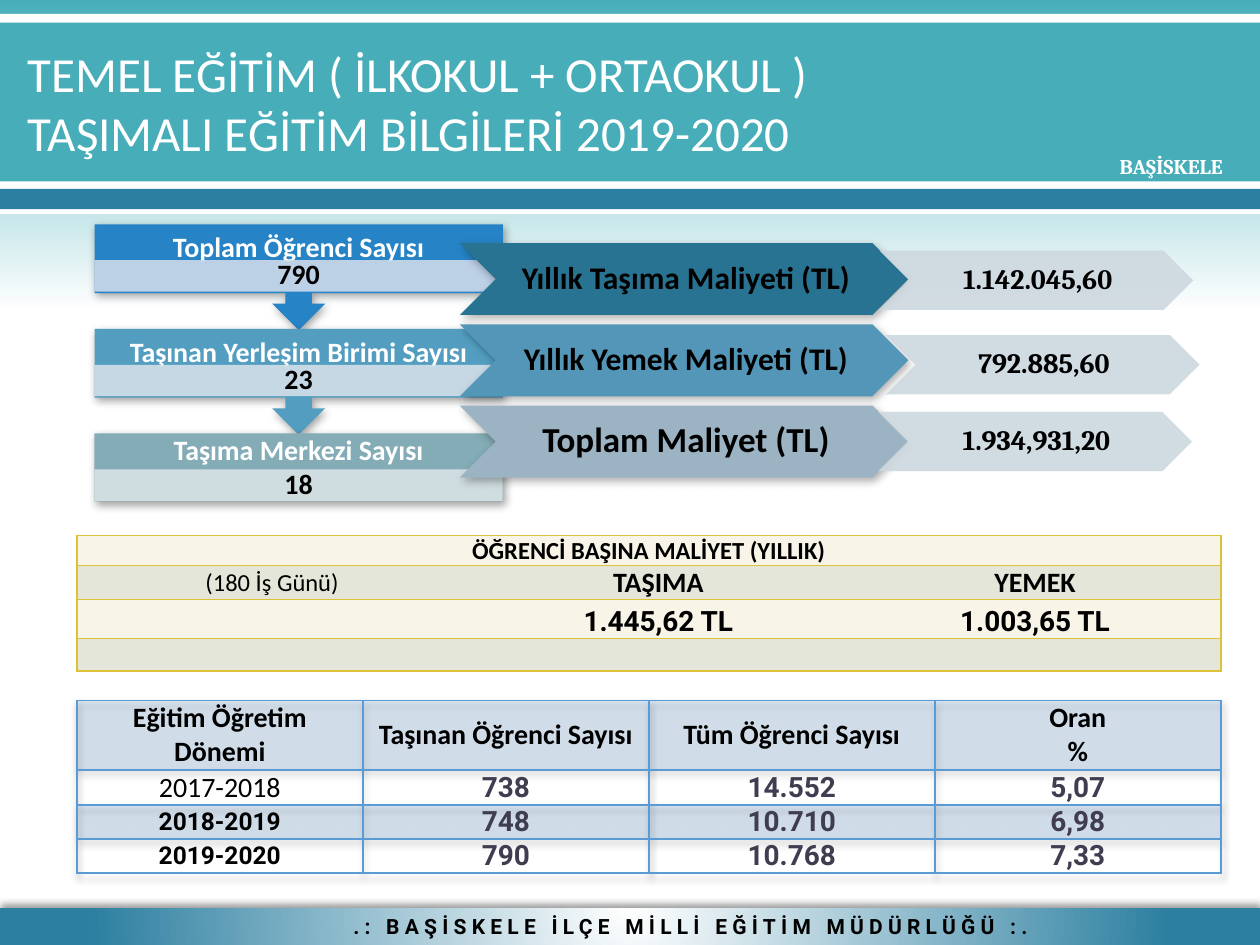
from lxml import etree
from pptx import Presentation
from pptx.dml.color import RGBColor
from pptx.enum import shapes, text
from pptx.oxml import ns, parse_xml
from pptx.util import Inches, Pt

WHITE = RGBColor(0xFF, 0xFF, 0xFF)
BLACK = RGBColor(0, 0, 0)
TEAL = RGBColor(0x47, 0xAE, 0xB9)
DEEP_BLUE = RGBColor(0x2C, 0x7F, 0xA0)
AMOUNT_FILL = RGBColor(0xCD, 0xD8, 0xDF)
GOLD = RGBColor(0xDD, 0xC2, 0x37)
CREAM = RGBColor(0xF9, 0xF4, 0xE8)
SAGE = RGBColor(0xE5, 0xE6, 0xDA)
GRID_BLUE = RGBColor(0x5B, 0x9B, 0xD5)
FIGURE = RGBColor(0x40, 0x3D, 0x50)
PLAIN_TABLE = "{2D5ABB26-0587-4C30-8999-92F81FD0307C}"

COUNTS = [  # label, value, header fill, value fill
    ("Toplam Öğrenci Sayısı", "790", RGBColor(0x26, 0x83, 0xC6), RGBColor(0xCD, 0xD9, 0xEA)),
    ("Taşınan Yerleşim Birimi Sayısı", "23", RGBColor(0x53, 0x9E, 0xC0), RGBColor(0xD3, 0xDF, 0xE8)),
    ("Taşıma Merkezi Sayısı", "18", RGBColor(0x84, 0xAC, 0xB6), RGBColor(0xD9, 0xE3, 0xE5)),
]
COSTS = [  # label, label size, fill, amount, amount offset from the box
    ("Yıllık Taşıma Maliyeti (TL)", 18, RGBColor(0x28, 0x73, 0x91), "1.142.045,60", (3.33, 0.06)),
    ("Yıllık Yemek Maliyeti (TL)", 18, RGBColor(0x54, 0x96, 0xB8), "792.885,60", (3.38, 0.73)),
    ("Toplam Maliyet (TL)", 20, RGBColor(0x9B, 0xB3, 0xC3), "1.934,931,20", (3.32, 1.34)),
]
UNIT_COSTS = [
    ("ÖĞRENCİ BAŞINA MALİYET (YILLIK)", "", ""),
    ("(180 İş Günü)", "TAŞIMA", "YEMEK"),
    ("", "1.445,62 TL", "1.003,65 TL"),
    ("", "", ""),
]
YEARS = [
    ("Eğitim Öğretim\nDönemi", "Taşınan Öğrenci Sayısı", "Tüm Öğrenci Sayısı", "Oran\n%"),
    ("2017-2018", "738", "14.552", "5,07"),
    ("2018-2019", "748", "10.710", "6,98"),
    ("2019-2020", "790", "10.768", "7,33"),
]


def gradient(stops, direction):
    stop_xml = "".join(f'<a:gs pos="{position * 1000}"><a:srgbClr val="{color}"/></a:gs>'
                       for position, color in stops)
    return parse_xml(f'<a:gradFill {ns.nsdecls("a")} rotWithShape="1">'
                     f"<a:gsLst>{stop_xml}</a:gsLst>{direction}</a:gradFill>")


def shadow_effect(opacity, blur, distance, angle):
    return parse_xml(
        f'<a:effectLst {ns.nsdecls("a")}><a:outerShdw blurRad="{Pt(blur)}" dist="{Pt(distance)}" '
        f'dir="{angle * 60000}" rotWithShape="0"><a:srgbClr val="000000">'
        f'<a:alpha val="{opacity * 1000}"/></a:srgbClr></a:outerShdw></a:effectLst>')


def set_opacity(fill_parent, percent):
    color = fill_parent.find(ns.qn("a:solidFill"))[0]
    etree.SubElement(color, ns.qn("a:alpha")).set("val", str(percent * 1000))


def add_block(slide, kind, box, color, opacity=100, shadow=None):
    shape = slide.shapes.add_shape(kind, *map(Inches, box))
    shape.line.fill.background()
    shape.fill.solid()
    shape.fill.fore_color.rgb = color
    properties = shape._element.spPr
    if opacity < 100:
        set_opacity(properties, opacity)
    if shadow:
        properties.append(shadow_effect(*shadow))
    else:
        shape.shadow.inherit = False
    return shape


def write(frame, content, size, color=BLACK, font="Calibri", bold=True,
          align=text.PP_ALIGN.CENTER, spacing=None):
    frame.text = content
    for paragraph in frame.paragraphs:
        paragraph.alignment = align
        paragraph.line_spacing = spacing
        for run in paragraph.runs:
            run.font.size, run.font.name, run.font.bold = Pt(size), font, bold
            run.font.color.rgb = color


def set_insets(frame, left, top, right, bottom):
    frame.word_wrap = True
    frame.vertical_anchor = text.MSO_ANCHOR.MIDDLE
    frame.margin_left, frame.margin_top = Inches(left), Inches(top)
    frame.margin_right, frame.margin_bottom = Inches(right), Inches(bottom)


def add_caption(slide, box, content, **style):
    frame = slide.shapes.add_textbox(*map(Inches, box)).text_frame
    frame.word_wrap = False
    write(frame, content, 12, **style)
    return frame


def add_header(slide, top):
    for offset, height, color in ((0, 1.59, WHITE), (0.07, 1.26, TEAL), (1.39, 0.16, DEEP_BLUE)):
        add_block(slide, shapes.MSO_SHAPE.RECTANGLE, (0, top + offset, 10, height), color)
    add_caption(slide, (8.77, top + 1.06, 1.05, 0.3), "BAŞİSKELE", color=WHITE, font="Cambria")
    title = slide.shapes.title
    title.left, title.top, title.width, title.height = map(Inches, (0.12, top + 0.09, 8.58, 1.22))
    frame = title.text_frame
    frame.auto_size = text.MSO_AUTO_SIZE.NONE
    frame.vertical_anchor = text.MSO_ANCHOR.MIDDLE
    write(frame, "TEMEL EĞİTİM ( İLKOKUL + ORTAOKUL )\vTAŞIMALI EĞİTİM BİLGİLERİ 2019-2020",
          28, WHITE, bold=False, align=text.PP_ALIGN.LEFT)
    slide.shapes._spTree.append(title._element)  # bring in front of the bands


def add_footer(slide, top):
    bar = add_block(slide, shapes.MSO_SHAPE.RECTANGLE, (0, top, 10, 0.29), DEEP_BLUE,
                    shadow=(40, 4, 3, 270))
    properties = bar._element.spPr
    circle = ('<a:path path="circle"><a:fillToRect l="50000" t="-80000" r="50000" b="180000"/>'
              "</a:path>")
    properties.replace(properties.find(ns.qn("a:solidFill")),
                       gradient([(0, WHITE), (86, DEEP_BLUE)], circle))
    frame = add_caption(slide, (2.58, top - 0.01, 5.81, 0.3),
                        ".: BAŞİSKELE İLÇE MİLLİ EĞİTİM MÜDÜRLÜĞÜ :.", font="Roboto")
    frame.paragraphs[0].runs[0].font._element.set("spc", "300")


def add_count_steps(slide, left, top, width):
    pitch = 0.83
    for index, (label, value, color, tint) in enumerate(COUNTS):
        y = top + index * pitch
        last = index == len(COUNTS) - 1
        kind = shapes.MSO_SHAPE.RECTANGLE if last else shapes.MSO_SHAPE.UP_ARROW_CALLOUT
        step = add_block(slide, kind, (left, y, width, 0.54 if last else 0.84), color,
                         shadow=(36, 5, 2, 60))
        step.rotation = 0 if last else 180
        label_box = (left, y, width, 0.29) if last else (left, y + 0.1, width, 0.19)
        frame = slide.shapes.add_textbox(*map(Inches, label_box)).text_frame
        set_insets(frame, 0.12, 0.12, 0.12, 0.12)
        write(frame, label, 16, WHITE, spacing=0.9)
        bar = add_block(slide, shapes.MSO_SHAPE.RECTANGLE, (left, y + 0.285, width, 0.25), tint, 90)
        set_insets(bar.text_frame, 0.12, 0.02, 0.12, 0.02)
        write(bar.text_frame, value, 16, spacing=0.9)


def add_cost_arrows(slide, left, top):
    chevron = shapes.MSO_SHAPE.CHEVRON
    for index, (label, size, color, amount, (dx, dy)) in enumerate(COSTS):
        arrow = add_block(slide, chevron, (left, top + index * 0.645, 3.56, 0.57), color,
                          shadow=(30, 5, 2, 60))
        set_insets(arrow.text_frame, 0.03, 0.01, 0, 0.01)
        write(arrow.text_frame, label, size, spacing=0.9)
        result = add_block(slide, chevron, (left + dx, top + dy, 2.49, 0.47), AMOUNT_FILL, 90)
        set_insets(result.text_frame, 0.02, 0.01, 0, 0.01)
        write(result.text_frame, amount, 16, font="Cambria", spacing=0.9)


def add_grid(slide, left, top, widths, heights):
    box = (left, top, sum(widths), sum(heights))
    frame = slide.shapes.add_table(len(heights), len(widths), *map(Inches, box))
    table = frame.table
    table._tbl.tblPr.find(ns.qn("a:tableStyleId")).text = PLAIN_TABLE
    for column, width in zip(table.columns, widths):
        column.width = Inches(width)
    for row, height in zip(table.rows, heights):
        row.height = Inches(height)
    return table


def fill_cell(cell, content, sides, line_color, fill_color, inset, **style):
    properties = cell._tc.get_or_add_tcPr()
    for side in sides:
        properties.append(parse_xml(
            f'<a:ln{side} {ns.nsdecls("a")} w="12700"><a:solidFill>'
            f'<a:srgbClr val="{line_color}"/></a:solidFill></a:ln{side}>'))
    if fill_color is None:
        cell.fill.background()
    else:
        cell.fill.solid()
        cell.fill.fore_color.rgb = fill_color
    cell.margin_left = cell.margin_right = Inches(inset)
    cell.margin_top = cell.margin_bottom = 0
    cell.vertical_anchor = text.MSO_ANCHOR.MIDDLE
    write(cell.text_frame, content, **style)
    if not content:
        cell.text_frame.paragraphs[0]._p.get_or_add_endParaRPr().set("sz", "1200")


def add_unit_cost_table(slide, left, top):
    table = add_grid(slide, left, top, (3.1, 3.03, 2.95), (0.24, 0.27, 0.3, 0.26))
    table.cell(0, 0).merge(table.cell(0, 2))
    for r, row in enumerate(UNIT_COSTS):
        for c, content in enumerate(row):
            sides = ("L" if c == 0 else "") + ("R" if c == 2 or r == 0 else "") + "TB"
            fill_cell(table.cell(r, c), content, sides, GOLD, SAGE if r % 2 else CREAM, 0.06,
                      size=14 if c == 0 else 16, bold=(r, c) != (1, 0),
                      font="Roboto" if r == 2 else "Calibri", spacing=1.15 if r == 2 else None)


def add_year_table(slide, left, top):
    table = add_grid(slide, left, top, [2.27] * 4, (0.55, 0.28, 0.27, 0.27))
    table._tbl.tblPr.insert(0, shadow_effect(35, 4, 2, 90))
    for r, row in enumerate(YEARS):
        for c, content in enumerate(row):
            cell = table.cell(r, c)
            figure = r > 0 and c > 0
            fill_cell(cell, content, "LRTB", GRID_BLUE, None if r % 2 else GRID_BLUE, 0.01,
                      size=14 if r > 1 and c == 0 else 16, bold=(r, c) != (1, 0),
                      color=FIGURE if figure else BLACK,
                      font="Roboto" if figure or r > 1 else "Calibri")
            if r % 2 == 0:
                set_opacity(cell._tc.tcPr, 20)


def main():
    presentation = Presentation()
    presentation.slide_width, presentation.slide_height = Inches(10), Inches(7.5)
    slide = presentation.slides.add_slide(presentation.slide_layouts[5])
    slide.background.fill.solid()
    background = slide._element.cSld.find(ns.qn("p:bg"))[0]
    background.replace(background[0], gradient([(0, WHITE), (67, WHITE), (100, TEAL)],
                                               '<a:lin ang="16200000" scaled="0"/>'))
    add_header(slide, 0.11)
    add_footer(slide, 7.21)
    add_count_steps(slide, 0.75, 1.78, 3.24)
    add_year_table(slide, 0.61, 5.56)
    add_cost_arrows(slide, 3.65, 1.93)
    add_unit_cost_table(slide, 0.61, 4.25)
    presentation.save("out.pptx")


if __name__ == "__main__":
    main()
